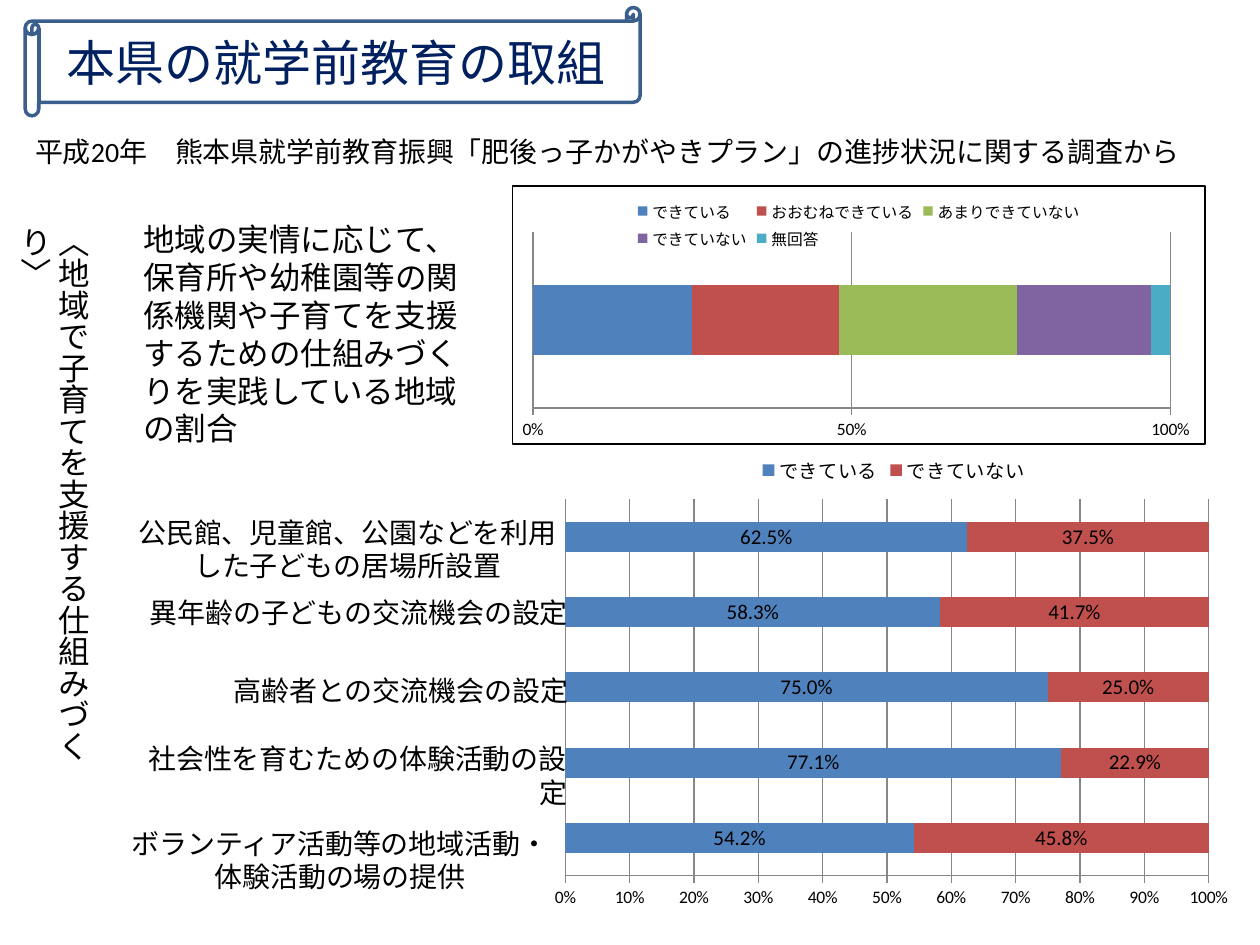
"""Build the slide on preschool education measures with two survey charts."""
from lxml import etree
from pptx import Presentation
from pptx.chart.data import CategoryChartData
from pptx.dml.color import RGBColor
from pptx.enum.chart import XL_CHART_TYPE as ChartType, XL_LEGEND_POSITION as LegendPosition
from pptx.enum.chart import XL_TICK_MARK as TickMark
from pptx.enum.shapes import MSO_SHAPE as Shape
from pptx.enum.text import MSO_ANCHOR as Anchor, MSO_AUTO_SIZE as AutoSize, PP_ALIGN as Align
from pptx.oxml import parse_xml
from pptx.util import Inches, Pt

BLACK = RGBColor(0x00, 0x00, 0x00)
NAVY = RGBColor(0x00, 0x20, 0x60)
SCROLL_LINE = RGBColor(0x3A, 0x5F, 0x8C)
GRID = RGBColor(0x87, 0x87, 0x87)
SERIES_COLORS = [
    RGBColor(0x4F, 0x81, 0xBD),
    RGBColor(0xC0, 0x50, 0x4D),
    RGBColor(0x9B, 0xBB, 0x59),
    RGBColor(0x80, 0x64, 0xA2),
    RGBColor(0x4B, 0xAC, 0xC6),
]
CHART_NS = "http://schemas.openxmlformats.org/drawingml/2006/chart"
DRAWING_NS = "http://schemas.openxmlformats.org/drawingml/2006/main"


def write_text(shape, *texts, size=16, color=BLACK, align=Align.LEFT, fonts=("Calibri",)):
    frame = shape.text_frame
    frame.word_wrap = True
    paragraph = frame.paragraphs[0]
    paragraph.alignment = align
    for text, font in zip(texts, fonts):
        run = paragraph.add_run()
        run.text = text
        run.font.size = Pt(size)
        run.font.name = font
        run.font.color.rgb = color
    return frame


def add_bar_chart(shapes, box, chart_type, categories, series, legend_size, major_unit, plot_box):
    data = CategoryChartData(number_format="0.0%")
    data.categories = categories
    for name, values in series:
        data.add_series(name, values)
    chart = shapes.add_chart(chart_type, *map(Inches, box), data).chart
    chart.font.size = Pt(10)
    chart.font.name = "Calibri"
    chart.font.color.rgb = BLACK
    chart.has_title = False
    chart.has_legend = True
    chart.legend.position = LegendPosition.TOP
    chart.legend.include_in_layout = False
    chart.legend.font.size = Pt(legend_size)
    chart.category_axis.visible = False
    axis = chart.value_axis
    axis.minimum_scale, axis.maximum_scale, axis.major_unit = 0, 1, major_unit
    axis.major_tick_mark = TickMark.OUTSIDE
    axis.tick_labels.number_format = "0%"
    axis.tick_labels.number_format_is_linked = False
    axis.format.line.color.rgb = GRID
    axis.major_gridlines.format.line.color.rgb = GRID
    plot = chart.plots[0]
    plot.gap_width, plot.overlap, plot.vary_by_categories = 150, 100, False
    for bar_series, color in zip(plot.series, SERIES_COLORS):
        bar_series.format.fill.solid()
        bar_series.format.fill.fore_color.rgb = color
    plot_area = chart.plots[0]._element.getparent()
    for layout in plot_area.findall(f"{{{CHART_NS}}}layout"):
        plot_area.remove(layout)
    layout = etree.Element(f"{{{CHART_NS}}}layout")
    manual = etree.SubElement(layout, f"{{{CHART_NS}}}manualLayout")
    settings = [("layoutTarget", "inner"), ("xMode", "edge"), ("yMode", "edge")]
    for tag, value in settings + list(zip("xywh", plot_box)):
        etree.SubElement(manual, f"{{{CHART_NS}}}{tag}").set("val", str(value))
    plot_area.insert(0, layout)
    return chart


presentation = Presentation()
presentation.slide_width, presentation.slide_height = Inches(10), Inches(7.5)
slide = presentation.slides.add_slide(presentation.slide_layouts[6])

practice_chart = add_bar_chart(
    slide.shapes, (4.06, 1.47, 5.51, 2.06), ChartType.BAR_STACKED, ["1"],
    [("できている", [0.25]), ("おおむねできている", [0.23]), ("あまりできていない", [0.28]),
     ("できていない", [0.21]), ("無回答", [0.03])],
    legend_size=9, major_unit=0.5, plot_box=(0.03, 0.18, 0.92, 0.68))
border = parse_xml(
    f'<c:spPr xmlns:c="{CHART_NS}" xmlns:a="{DRAWING_NS}"><a:noFill/><a:ln w="9525">'
    '<a:solidFill><a:srgbClr val="000000"/></a:solidFill></a:ln></c:spPr>')
practice_chart._chartSpace.find(f"{{{CHART_NS}}}txPr").addprevious(border)

theme = slide.shapes.add_textbox(Inches(0.28), Inches(1.7), Inches(0.5), Inches(4.68))
frame = write_text(theme, "〈地域で子育てを支援する仕組みづくり〉", size=18)
frame.auto_size = AutoSize.SHAPE_TO_FIT_TEXT
frame._txBody.bodyPr.set("vert", "eaVert")

heading = slide.shapes.add_shape(
    Shape.HORIZONTAL_SCROLL, Inches(0.2), Inches(0.06), Inches(4.88), Inches(0.86))
heading.shadow.inherit = False
heading.fill.background()
heading.line.color.rgb = SCROLL_LINE
heading.line.width = Pt(2)
frame = write_text(heading, "本県の就学前教育の取組", size=28, color=NAVY, align=Align.CENTER)
frame.vertical_anchor = Anchor.MIDDLE

description = slide.shapes.add_textbox(Inches(1.04), Inches(1.7), Inches(2.91), Inches(1.62))
frame = write_text(
    description,
    "地域の実情に応じて、保育所や幼稚園等の関係機関や子育てを支援するための仕組みづくりを実践している地域の割合",
    size=18)
frame.auto_size = AutoSize.SHAPE_TO_FIT_TEXT

activities = slide.shapes.add_group_shape()
activity_chart = add_bar_chart(
    activities.shapes, (4.32, 3.51, 5.55, 3.78), ChartType.BAR_STACKED_100,
    ["1", "2", "3", "4", "5"],
    [("できている", [0.542, 0.771, 0.75, 0.583, 0.625]),
     ("できていない", [0.458, 0.229, 0.25, 0.417, 0.375])],
    legend_size=11, major_unit=0.1, plot_box=(0.03, 0.12, 0.92, 0.79))
for bar_series in activity_chart.plots[0].series:
    labels = bar_series.data_labels
    labels.show_value = True
    labels.number_format = "0.0%"
    labels.number_format_is_linked = False
    labels.font.size = Pt(12)

ACTIVITY_LABELS = [
    (0.91, 4.04, 0.64, Align.CENTER, "公民館、児童館、公園などを利用した子どもの居場所設置"),
    (0.91, 4.68, 0.37, Align.RIGHT, "異年齢の子どもの交流機会の設定"),
    (0.91, 5.3, 0.37, Align.RIGHT, "高齢者との交流機会の設定"),
    (0.9, 5.84, 0.37, Align.RIGHT, "社会性を育むための体験活動の設定"),
    (0.85, 6.51, 0.64, Align.CENTER, "ボランティア活動等の地域活動・体験活動の場の提供"),
]
for left, top, height, align, text in ACTIVITY_LABELS:
    label = activities.shapes.add_textbox(Inches(left), Inches(top), Inches(3.7), Inches(height))
    write_text(label, text, align=align).auto_size = AutoSize.SHAPE_TO_FIT_TEXT

survey = slide.shapes.add_textbox(Inches(0.18), Inches(1.02), Inches(9.55), Inches(0.37))
frame = write_text(
    survey, "平成20", "年　熊本県就学前教育振興「肥後っ子かがやきプラン」の進捗状況に関する調査から",
    fonts=("Calibri", "Arial"))
frame.auto_size = AutoSize.SHAPE_TO_FIT_TEXT

presentation.save("out.pptx")
